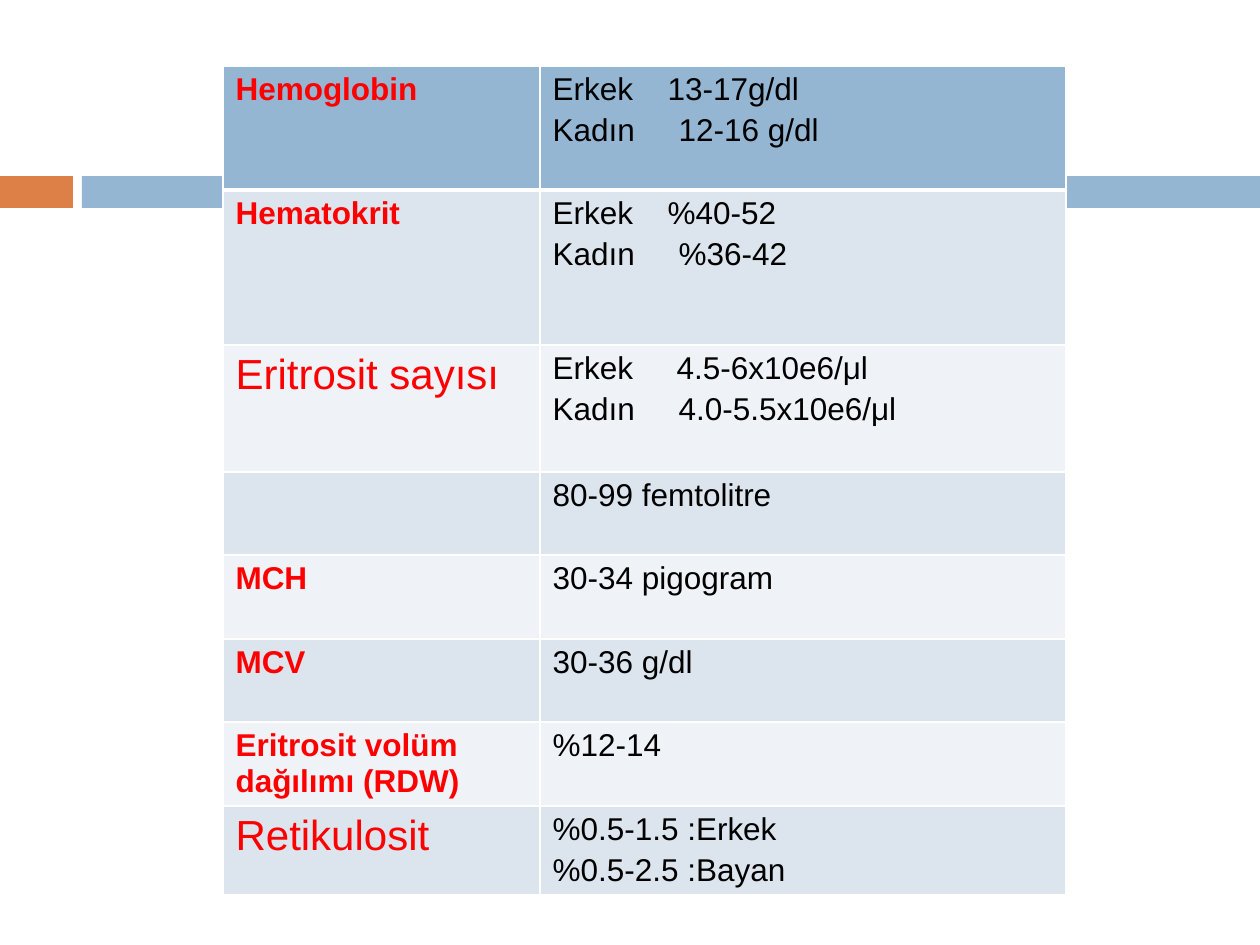
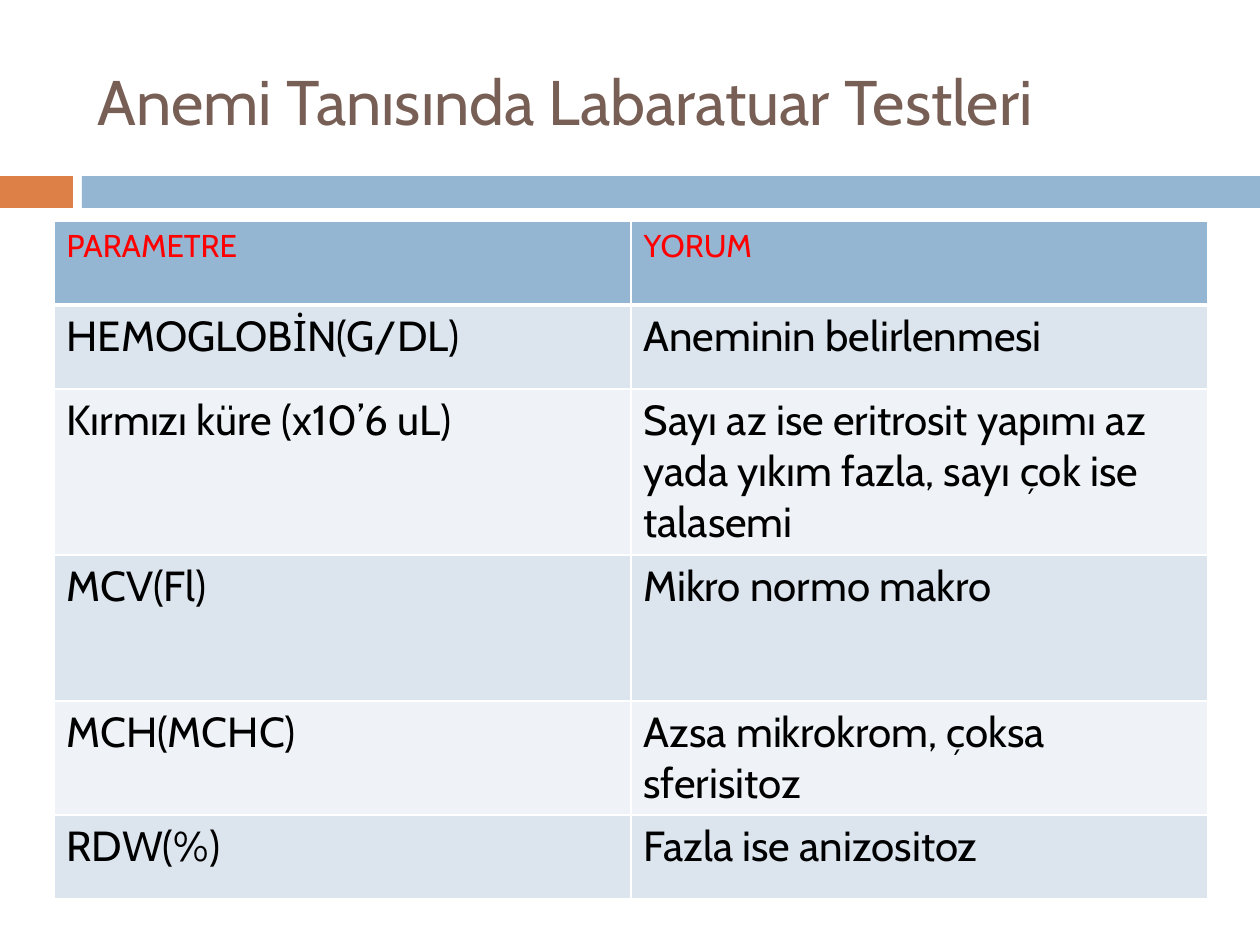
from collections import namedtuple
from dataclasses import dataclass

from lxml.etree import SubElement
from pptx import Presentation
from pptx.dml.color import RGBColor
from pptx.enum.shapes import MSO_SHAPE
from pptx.enum.text import MSO_ANCHOR
from pptx.oxml.ns import qn
from pptx.util import Emu, Pt


@dataclass(frozen=True)
class Theme:
    orange: str = "DD8047"
    blue: str = "94B6D2"
    stripe_dark: str = "DCE5EE"
    stripe_light: str = "EFF3F7"
    brown: str = "775F55"
    red: str = "FF0000"
    black: str = "000000"
    white: str = "FFFFFF"
    title_size: int = 36
    large_size: int = 24
    small_size: int = 18
    title_font: str = "Cabin"
    range_font: str = "Arial"


theme = Theme()
TextStyle = namedtuple("TextStyle", "size color bold")
bold_label = TextStyle(theme.small_size, theme.red, True)
large_label = TextStyle(theme.large_size, theme.red, False)
range_text = TextStyle(theme.small_size, theme.black, False)
heading = TextStyle(theme.small_size, theme.red, False)
body = TextStyle(theme.large_size, theme.black, False)


def px(length):
    return Emu(round(length * 914400 / 126))


def add_lab_table(slide, left, top, widths, heights, rows, style_rows, font_name):
    table = slide.shapes.add_table(
        len(rows), len(widths), px(left), px(top), px(sum(widths)), px(sum(heights))
    ).table
    for column, width in zip(table.columns, widths):
        column.width = px(width)
    for r, (texts, styles) in enumerate(zip(rows, style_rows)):
        table.rows[r].height = px(heights[r])
        stripe = theme.stripe_dark if r % 2 else theme.stripe_light
        line_widths = {"L": 1, "R": 1, "T": 3 if r == 1 else 1, "B": 3 if r == 0 else 1}
        for c, (text, style) in enumerate(zip(texts, styles)):
            cell = table.cell(r, c)
            properties = cell._tc.get_or_add_tcPr()
            for side, points in line_widths.items():
                line = SubElement(properties, qn(f"a:ln{side}"), w=str(Pt(points)))
                line_fill = SubElement(line, qn("a:solidFill"))
                SubElement(line_fill, qn("a:srgbClr"), val=theme.white)
            cell.fill.solid()
            cell.fill.fore_color.rgb = RGBColor.from_string(stripe if r else theme.blue)
            cell.text_frame.text = text
            for p, paragraph in enumerate(cell.text_frame.paragraphs):
                if p:
                    paragraph.space_before = Pt(3)
                for run in paragraph.runs:
                    run.font.name = font_name
                    run.font.size = Pt(style.size)
                    run.font.bold = style.bold
                    run.font.color.rgb = RGBColor.from_string(style.color)
    return table


presentation = Presentation()
presentation.slide_width = px(1260)
presentation.slide_height = px(945)
blank = presentation.slide_layouts[6]
ranges_slide = presentation.slides.add_slide(blank)
tests_slide = presentation.slides.add_slide(blank)

for slide in (ranges_slide, tests_slide):
    for left, width, color in ((0, 73, theme.orange), (82, 1178, theme.blue)):
        band = slide.shapes.add_shape(
            MSO_SHAPE.RECTANGLE, px(left), px(176), px(width), px(32)
        )
        band.shadow.inherit = False
        band.fill.solid()
        band.fill.fore_color.rgb = RGBColor.from_string(color)
        band.line.fill.background()

reference_ranges = [
    ("Hemoglobin", "Erkek\t13-17g/dl\nKadın\t12-16 g/dl"),
    ("Hematokrit", "Erkek\t%40-52\nKadın\t%36-42"),
    ("Eritrosit sayısı", "Erkek\t4.5-6x10e6/μl\nKadın\t4.0-5.5x10e6/μl"),
    ("", "80-99 femtolitre"),
    ("MCH", "30-34 pigogram"),
    ("MCV", "30-36 g/dl"),
    ("Eritrosit volüm dağılımı (RDW)", "%12-14"),
    ("Retikulosit", "%0.5-1.5 :Erkek\n%0.5-2.5 :Bayan"),
]
large_names = ("Eritrosit sayısı", "Retikulosit")
range_styles = [
    (large_label if name in large_names else bold_label, range_text)
    for name, _ in reference_ranges
]
ranges_table = add_lab_table(
    ranges_slide, 223, 66, (317, 526), (124, 155, 127, 83, 84, 83, 84, 89),
    reference_ranges, range_styles, theme.range_font,
)
value_stops = ((115, 126), (115, 126), (124, 126))
for r, stops in enumerate(value_stops):
    for paragraph, stop in zip(ranges_table.cell(r, 1).text_frame.paragraphs, stops):
        tabs = SubElement(paragraph._p.get_or_add_pPr(), qn("a:tabLst"))
        SubElement(tabs, qn("a:tab"), pos=str(px(stop)), algn="l")

title = tests_slide.shapes.add_textbox(px(85), px(32), px(1124), px(136))
title.text_frame.word_wrap = True
title.text_frame.vertical_anchor = MSO_ANCHOR.MIDDLE
title.text_frame.text = "Anemi Tanısında Labaratuar Testleri"
title_font = title.text_frame.paragraphs[0].runs[0].font
title_font.name = theme.title_font
title_font.size = Pt(theme.title_size)
title_font.color.rgb = RGBColor.from_string(theme.brown)

lab_tests = [
    ("PARAMETRE", "YORUM"),
    ("HEMOGLOBİN(G/DL)", "Aneminin belirlenmesi"),
    (
        "Kırmızı küre (x10’6 uL)",
        "Sayı az ise eritrosit yapımı az yada yıkım fazla, sayı çok ise talasemi",
    ),
    ("MCV(Fl)", "Mikro normo makro"),
    ("MCH(MCHC)", "Azsa mikrokrom, çoksa sferisitoz"),
    ("RDW(%)", "Fazla ise anizositoz"),
]
test_styles = [(heading, heading)] + [(body, body)] * (len(lab_tests) - 1)
add_lab_table(
    tests_slide, 54, 221, (577, 577), (84, 84, 166, 146, 114, 84),
    lab_tests, test_styles, theme.title_font,
)

presentation.save("out.pptx")
